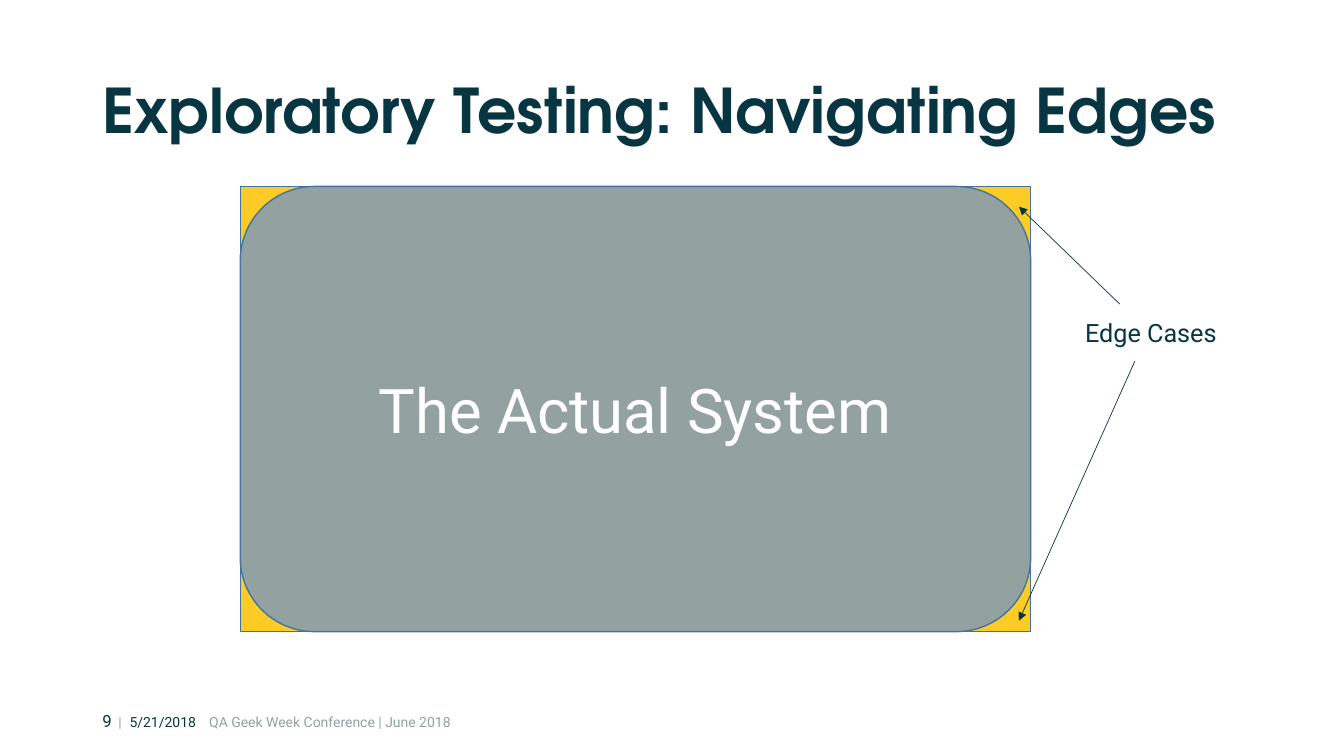
from lxml.etree import SubElement
from pptx import Presentation
from pptx.dml.color import RGBColor
from pptx.enum.shapes import MSO_CONNECTOR as Connector, MSO_SHAPE as Shape
from pptx.enum.text import MSO_ANCHOR as Anchor, PP_ALIGN as Align
from pptx.oxml.ns import qn
from pptx.util import Inches, Pt

COLORS = {
    "ink": "073642",
    "gray": "93A1A1",
    "yellow": "FDCB26",
    "outline": "43739E",
    "white": "FFFFFF",
}
COLUMNS, ROWS = 160, 90


class SlideBuilder:
    body_font = "Roboto"
    title_font = "TeX Gyre Adventor"

    def __init__(self, deck):
        self.page = deck.slides.add_slide(deck.slide_layouts[6])
        self.column = deck.slide_width / COLUMNS
        self.row = deck.slide_height / ROWS

    def color(self, name):
        return RGBColor.from_string(COLORS[name])

    def place(self, left, top, width, height):
        return (round(left * self.column), round(top * self.row),
                round(width * self.column), round(height * self.row))

    def add_span(self, para, text, size, color="ink", font=body_font, bold=False):
        span = para.add_run()
        span.text = text
        span.font.name = font
        span.font.size = Pt(size)
        span.font.bold = bold
        span.font.color.rgb = self.color(color)

    def text(self, area, anchor=Anchor.TOP):
        box = self.page.shapes.add_textbox(*self.place(*area))
        box.text_frame.word_wrap = True
        box.text_frame.vertical_anchor = anchor
        return box.text_frame.paragraphs[0]

    def title(self, area, text):
        para = self.text(area, Anchor.MIDDLE)
        para.line_spacing = 0.9
        self.add_span(para, text, 44, font=self.title_font, bold=True)

    def panel(self, kind, area, fill):
        shape = self.page.shapes.add_shape(kind, *self.place(*area))
        shape.shadow.inherit = False
        shape.fill.solid()
        shape.fill.fore_color.rgb = self.color(fill)
        shape.line.color.rgb = self.color("outline")
        shape.line.width = Pt(1)
        shape.text_frame.vertical_anchor = Anchor.MIDDLE
        para = shape.text_frame.paragraphs[0]
        para.alignment = Align.CENTER
        return para

    def arrow(self, start, end):
        arrow = self.page.shapes.add_connector(
            Connector.STRAIGHT, *self.place(*start, *end))
        arrow.line.color.rgb = self.color("ink")
        arrow.line.width = Pt(0.5)
        properties = arrow._element.spPr
        SubElement(properties.find(qn("a:ln")), qn("a:tailEnd"), type="triangle")
        SubElement(properties, qn("a:effectLst"))

    def footer(self, area, parts, stops):
        para = self.text(area)
        tabs = SubElement(para._p.get_or_add_pPr(), qn("a:tabLst"))
        for stop in stops:
            SubElement(tabs, qn("a:tab"), pos=str(Inches(stop)), algn="l")
        for text, size, color in parts:
            self.add_span(para, text, size, color)


def main():
    deck = Presentation()
    deck.slide_width, deck.slide_height = Inches(13.33), Inches(7.5)
    slide = SlideBuilder(deck)

    slide.footer((11, 84, 90, 3.6), [
        ("9", 12, "ink"),
        ("\t|", 10, "gray"),
        ("\t5/21/2018", 10, "ink"),
        ("\tQA Geek Week Conference | June 2018", 10, "gray"),
    ], (0.16, 0.27, 1.06))

    system = (28.6, 22.2, 94.1, 53)
    slide.panel(Shape.RECTANGLE, system, "yellow")
    slide.title((11, 4.8, 138, 17.4), "Exploratory Testing: Navigating Edges")
    label = slide.panel(Shape.ROUNDED_RECTANGLE, system, "gray")
    slide.add_span(label, "The Actual System", 44, "white")

    slide.add_span(slide.text((128, 37.2, 22, 4.8)), "Edge Cases", 18)
    for start, end in [((133.3, 36.2), (121.3, 24.6)),
                       ((135.1, 43), (121.3, 73.9))]:
        slide.arrow(start, end)

    deck.save("out.pptx")


if __name__ == "__main__":
    main()
